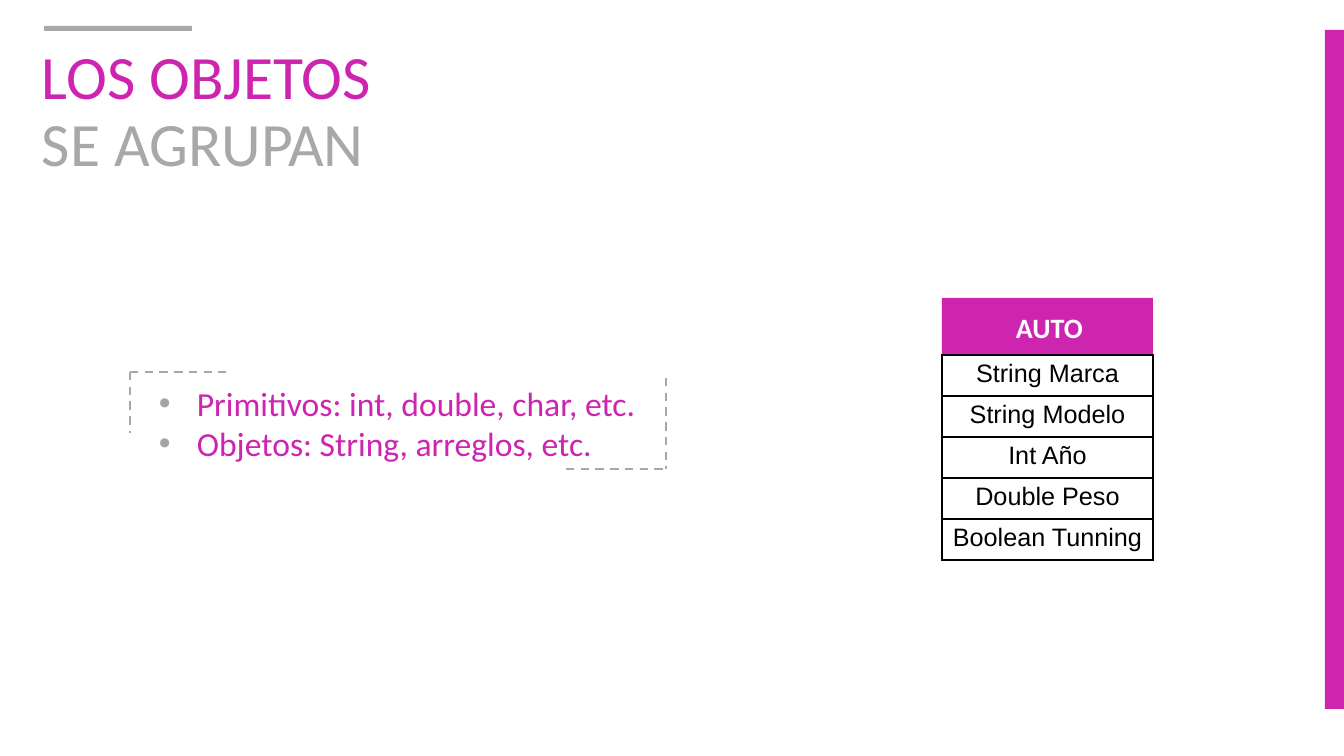
from lxml import etree
from pptx import Presentation
from pptx.dml.color import RGBColor
from pptx.enum.dml import MSO_LINE
from pptx.enum.shapes import MSO_CONNECTOR, MSO_SHAPE
from pptx.enum.text import MSO_ANCHOR, PP_ALIGN
from pptx.oxml.ns import qn
from pptx.util import Emu, Pt

RECTANGLE = MSO_SHAPE.RECTANGLE
STRAIGHT = MSO_CONNECTOR.STRAIGHT
DASH = MSO_LINE.DASH
TOP, MIDDLE = MSO_ANCHOR.TOP, MSO_ANCHOR.MIDDLE
CENTER = PP_ALIGN.CENTER

MAGENTA = RGBColor(0xCD, 0x25, 0xB0)
GRAY = RGBColor(0xA7, 0xA8, 0xAA)
BULLET_GRAY = RGBColor(0xA5, 0xA5, 0xA5)
WHITE = RGBColor(0xFF, 0xFF, 0xFF)
BLACK = RGBColor(0x00, 0x00, 0x00)

PX_PER_INCH = 100.8
ROW_HEIGHT = 41
TITLE_LINES = [("LOS OBJETOS", MAGENTA), ("SE AGRUPAN", GRAY)]
DATA_TYPES = ["Primitivos: int, double, char, etc.", "Objetos: String, arreglos, etc."]
CLASS_NAME = "AUTO"
ATTRIBUTES = ["String Marca", "String Modelo", "Int Año", "Double Peso", "Boolean Tunning"]
FRAME_LINES = [
    (130, 372, 130, 433),
    (666, 378, 666, 469),
    (130, 372, 226, 372),
    (566, 469, 666, 469),
]


def px(length):
    """Turn pixels into EMU."""
    return Emu(round(length * 914400 / PX_PER_INCH))


def set_font(paragraph, size, color, name="Calibri", bold=False):
    """Set the font shared by all runs of a paragraph."""
    font = paragraph.font
    font.name, font.size, font.bold = name, Pt(size), bold
    font.color.rgb = color


def add_block(slide, left, top, width, height, color):
    """Add a plain filled rectangle."""
    block = slide.shapes.add_shape(RECTANGLE, px(left), px(top), px(width), px(height))
    block.shadow.inherit = False
    block.fill.solid()
    block.fill.fore_color.rgb = color
    block.line.fill.background()


def add_text_frame(slide, left, top, width, height, anchor=TOP):
    """Add a wrapping text box and return its text frame."""
    frame = slide.shapes.add_textbox(px(left), px(top), px(width), px(height)).text_frame
    frame.word_wrap = True
    frame.vertical_anchor = anchor
    return frame


def add_title(slide):
    """Add the two-colour title."""
    title = add_text_frame(slide, 32, 40, 1159, 146, MIDDLE).paragraphs[0]
    title.line_spacing = 0.9
    title.font.name, title.font.size = "Calibri", Pt(44)
    for index, (wording, color) in enumerate(TITLE_LINES):
        if index:
            title.add_line_break()
        run = title.add_run()
        run.text = wording
        run.font.color.rgb = color


def add_bullet(paragraph):
    """Give a paragraph a hanging gray bullet."""
    properties = paragraph._p.get_or_add_pPr()
    properties.set("marL", str(px(50)))
    properties.set("indent", str(-px(38)))
    bullet_color = etree.Element(qn("a:buClr"))
    etree.SubElement(bullet_color, qn("a:srgbClr"), val=str(BULLET_GRAY))
    bullet_font = etree.Element(qn("a:buFont"), typeface="Arial")
    bullet_char = etree.Element(qn("a:buChar"), char="•")
    for position, part in enumerate((bullet_color, bullet_font, bullet_char)):
        properties.insert(position, part)


def add_type_list(slide):
    """Add the bulleted list of data types."""
    frame = add_text_frame(slide, 137, 378, 521, 92)
    frame.text = "\n".join(DATA_TYPES)
    for paragraph in frame.paragraphs:
        set_font(paragraph, 24, MAGENTA)
        add_bullet(paragraph)


def add_dashed_line(slide, x1, y1, x2, y2):
    """Add one dashed line of the list frame."""
    dashed = slide.shapes.add_connector(STRAIGHT, px(x1), px(y1), px(x2), px(y2))
    dashed.line.color.rgb = GRAY
    dashed.line.width = Pt(1.5)
    dashed.line.dash_style = DASH
    etree.SubElement(dashed._element.spPr, qn("a:effectLst"))


def add_borders(cell):
    """Draw a thin black border on every side of a cell."""
    properties = cell._tc.get_or_add_tcPr()
    for side in ("a:lnL", "a:lnR", "a:lnT", "a:lnB"):
        border = etree.SubElement(properties, qn(side), w=str(Pt(1)))
        fill = etree.SubElement(border, qn("a:solidFill"))
        etree.SubElement(fill, qn("a:srgbClr"), val=str(BLACK))


def add_class_header(slide):
    """Add the class name on its magenta block."""
    add_block(slide, 942, 298, 211, 56, MAGENTA)
    header = add_text_frame(slide, 1006, 306, 147, 44)
    header.text = CLASS_NAME
    set_font(header.paragraphs[0], 20, WHITE, bold=True)


def add_attribute_table(slide):
    """Add the one-column table of class attributes."""
    count = len(ATTRIBUTES)
    table = slide.shapes.add_table(
        count, 1, px(942), px(355), px(211), px(count * ROW_HEIGHT)
    ).table
    table.first_row = table.horz_banding = False
    for row, attribute in zip(table.rows, ATTRIBUTES):
        row.height = px(ROW_HEIGHT)
        cell = row.cells[0]
        cell.text = attribute
        paragraph = cell.text_frame.paragraphs[0]
        paragraph.alignment = CENTER
        set_font(paragraph, 18, BLACK, "Arial")
        add_borders(cell)
        cell.fill.background()


def main():
    """Build and save the slide."""
    presentation = Presentation()
    presentation.slide_width, presentation.slide_height = px(1344), px(756)
    slide = presentation.slides.add_slide(presentation.slide_layouts[6])
    add_title(slide)
    add_block(slide, 44, 26, 148, 5, GRAY)
    add_block(slide, 1325, 30, 19, 679, MAGENTA)
    add_type_list(slide)
    for ends in FRAME_LINES:
        add_dashed_line(slide, *ends)
    add_class_header(slide)
    add_attribute_table(slide)
    presentation.save("out.pptx")


if __name__ == "__main__":
    main()
